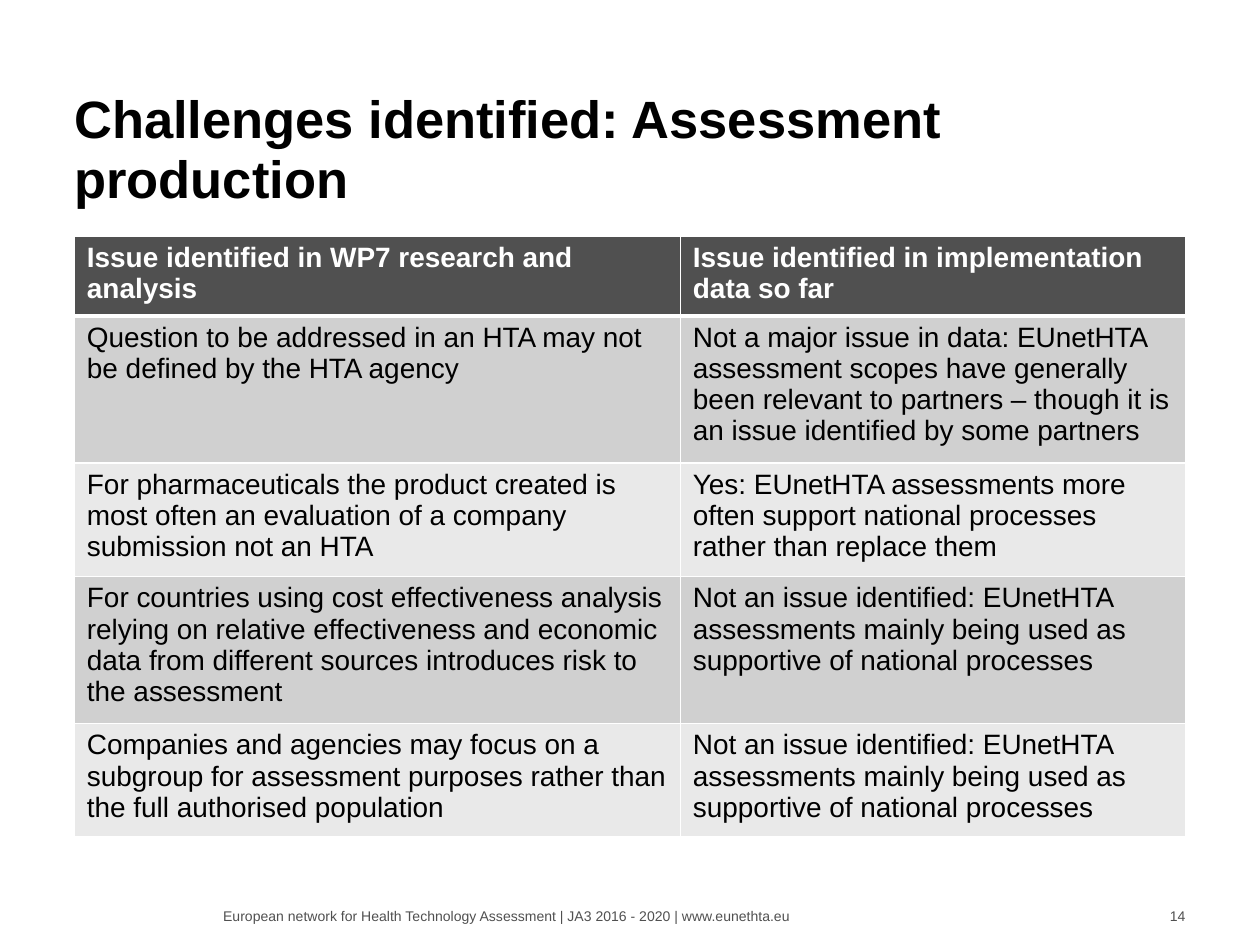
from dataclasses import dataclass

from lxml.etree import SubElement
from pptx import Presentation
from pptx.dml.color import RGBColor as Color
from pptx.enum.text import MSO_ANCHOR as Anchor, PP_ALIGN as Align
from pptx.oxml.ns import qn
from pptx.util import Pt


@dataclass(frozen=True)
class Theme:
    """Keep the colours, font and type sizes of the slide."""
    font: str = "Arial"
    ink: str = "000000"
    paper: str = "FFFFFF"
    grey: str = "505050"
    bands: tuple = ("D0D0D0", "E9E9E9")
    title_size: int = 30
    table_size: int = 16
    footer_size: int = 8


THEME = Theme()
MARGIN = 42.5
COLUMNS = (346.3, 288.7)
ROW_HEIGHTS = (42, 78, 60, 78, 60)
SUPPORTIVE = ("Not an issue identified: EUnetHTA assessments mainly being used "
              "as supportive of national processes")
ISSUES = (
    ("Issue identified in WP7 research and analysis",
     "Issue identified in implementation data so far"),
    ("Question to be addressed in an HTA may not be defined by the HTA agency",
     "Not a major issue in data: EUnetHTA assessment scopes have generally been "
     "relevant to partners – though it is an issue identified by some partners"),
    ("For pharmaceuticals the product created is most often an evaluation of a "
     "company submission not an HTA",
     "Yes: EUnetHTA assessments more often support national processes rather "
     "than replace them"),
    ("For countries using cost effectiveness analysis relying on relative "
     "effectiveness and economic data from different sources introduces risk "
     "to the assessment", SUPPORTIVE),
    ("Companies and agencies may focus on a subgroup for assessment purposes "
     "rather than the full authorised population", SUPPORTIVE),
)


def add_span(para, text, size, color, bold=False):
    """Add one formatted run to a paragraph."""
    span = para.add_run()
    span.text = text
    span.font.name = THEME.font
    span.font.size = Pt(size)
    span.font.bold = bold
    span.font.color.rgb = Color.from_string(color)


def add_text(page, left, top, width, height, anchor=Anchor.TOP, align=Align.LEFT):
    """Add a text box without insets and return its paragraph."""
    box = page.shapes.add_textbox(Pt(left), Pt(top), Pt(width), Pt(height))
    frame = box.text_frame
    frame.word_wrap = True
    frame.margin_left = frame.margin_right = 0
    frame.margin_top = frame.margin_bottom = 0
    frame.vertical_anchor = anchor
    para = frame.paragraphs[0]
    para.alignment = align
    return para


def add_border(cell, side, width):
    """Draw one edge of a cell in the paper colour."""
    line = SubElement(cell._tc.get_or_add_tcPr(), qn(f"a:ln{side}"), w=str(Pt(width)))
    fill = SubElement(line, qn("a:solidFill"))
    SubElement(fill, qn("a:srgbClr"), val=THEME.paper)


def fill_cell(cell, text, row):
    """Style one table cell according to its row and write its text."""
    header = row == 0
    widths = {"L": 1, "R": 1, "T": 3 if row == 1 else 1, "B": 3 if header else 1}
    for side, width in widths.items():
        add_border(cell, side, width)
    cell.fill.solid()
    shade = THEME.grey if header else THEME.bands[(row - 1) % 2]
    cell.fill.fore_color.rgb = Color.from_string(shade)
    color = THEME.paper if header else THEME.ink
    add_span(cell.text_frame.paragraphs[0], text, THEME.table_size, color, header)


def add_issue_table(page):
    """Add the table of issues with its header and banded rows."""
    table = page.shapes.add_table(
        len(ISSUES), len(COLUMNS), Pt(MARGIN), Pt(135),
        Pt(sum(COLUMNS)), Pt(sum(ROW_HEIGHTS))).table
    for column, width in zip(table.columns, COLUMNS):
        column.width = Pt(width)
    for index, (row, height, texts) in enumerate(zip(table.rows, ROW_HEIGHTS, ISSUES)):
        row.height = Pt(height)
        for cell, text in zip(row.cells, texts):
            fill_cell(cell, text, index)


def add_title(page):
    """Add the slide title."""
    para = add_text(page, MARGIN, 46, sum(COLUMNS), 74.5, anchor=Anchor.BOTTOM)
    para.line_spacing = 0.95
    add_span(para, "Challenges identified: Assessment production",
             THEME.title_size, THEME.ink, True)


def add_footer(page):
    """Add the footer line and the page number."""
    footer = add_text(page, 127.5, 518.4, 337.7, 9.5)
    add_span(footer, "European network for Health Technology Assessment | "
             "JA3 2016 - 2020 | www.eunethta.eu", THEME.footer_size, THEME.grey)
    number = add_text(page, 629.3, 518.4, 48.2, 9.5, align=Align.RIGHT)
    add_span(number, "14", THEME.footer_size, THEME.grey)


def main():
    """Build the slide and save the deck."""
    deck = Presentation()
    deck.slide_width, deck.slide_height = Pt(720), Pt(540)
    page = deck.slides.add_slide(deck.slide_layouts[6])
    add_title(page)
    add_issue_table(page)
    add_footer(page)
    deck.save("out.pptx")


if __name__ == "__main__":
    main()
